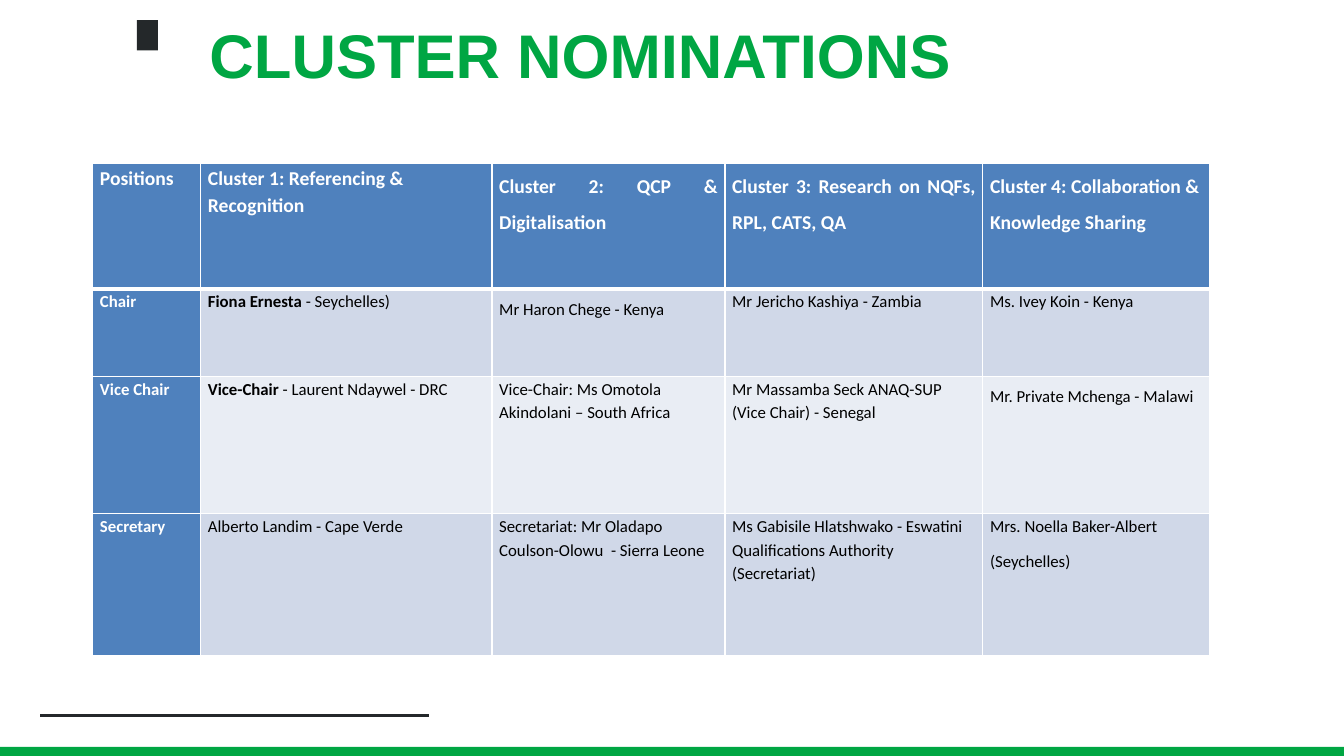
from lxml import etree
from pptx import Presentation
from pptx.dml.color import RGBColor
from pptx.enum.shapes import MSO_CONNECTOR as Connector, MSO_SHAPE as Preset
from pptx.enum.text import PP_ALIGN as Align
from pptx.oxml.ns import qn
from pptx.util import Cm, Pt

GREEN = RGBColor(0x00, 0xA6, 0x43)
INK = RGBColor(0x24, 0x28, 0x2A)
WHITE = RGBColor(0xFF, 0xFF, 0xFF)
BLACK = RGBColor(0x00, 0x00, 0x00)
BLUE = RGBColor(0x4F, 0x81, 0xBD)
BANDS = (RGBColor(0xD0, 0xD8, 0xE8), RGBColor(0xE9, 0xED, 0xF4))

TITLE = "CLUSTER NOMINATIONS"
ROWS = [
    ["Positions", "Cluster 1: Referencing & Recognition",
     "Cluster 2: QCP & Digitalisation",
     "Cluster 3: Research on NQFs, RPL, CATS, QA",
     "Cluster 4: Collaboration & Knowledge Sharing"],
    ["Chair", ("Fiona Ernesta ", "- Seychelles)"), "Mr Haron Chege - Kenya",
     "Mr Jericho Kashiya - Zambia", "Ms. Ivey Koin - Kenya"],
    ["Vice Chair", ("Vice-Chair", " - Laurent Ndaywel - DRC"),
     "Vice-Chair: Ms Omotola Akindolani – South Africa",
     "Mr Massamba Seck ANAQ-SUP (Vice Chair) - Senegal",
     "Mr. Private Mchenga - Malawi"],
    ["Secretary", "Alberto Landim - Cape Verde",
     "Secretariat: Mr Oladapo Coulson-Olowu  - Sierra Leone",
     "Ms Gabisile Hlatshwako - Eswatini Qualifications Authority (Secretariat)",
     ["Mrs. Noella Baker-Albert", "(Seychelles)"]],
]
COLUMN_WIDTHS = (2.72, 7.34, 5.87, 6.5, 5.72)
ROW_HEIGHTS = (3.17, 2.2, 3.46, 3.58)
WIDE_SPACED = {(0, 2), (0, 3), (0, 4), (1, 2), (2, 4)}
JUSTIFIED = WIDE_SPACED - {(0, 4)}


def add_run(paragraph, text, size, color, bold, font="Calibri"):
    run = paragraph.add_run()
    run.text = text
    run.font.name = font
    run.font.size = Pt(size)
    run.font.bold = bold
    run.font.color.rgb = color


def add_block(slide, left, top, width, height, color):
    shape = slide.shapes.add_shape(
        Preset.RECTANGLE, Cm(left), Cm(top), Cm(width), Cm(height))
    shape.shadow.inherit = False
    shape.fill.solid()
    shape.fill.fore_color.rgb = color
    shape.line.fill.background()


def add_borders(cell, bottom, top):
    properties = cell._tc.get_or_add_tcPr()
    for side, width in (("L", 1), ("R", 1), ("T", top), ("B", bottom)):
        line = etree.SubElement(properties, qn(f"a:ln{side}"), w=str(Pt(width)))
        fill = etree.SubElement(line, qn("a:solidFill"))
        etree.SubElement(fill, qn("a:srgbClr"), val=str(WHITE))


def fill_cell(cell, content, row, column):
    is_heading = row == 0 or column == 0
    add_borders(cell, bottom=3 if row == 0 else 1, top=3 if row == 1 else 1)
    cell.fill.solid()
    cell.fill.fore_color.rgb = BLUE if is_heading else BANDS[(row - 1) % 2]
    cell.margin_left = cell.margin_right = Cm(0.18)
    cell.margin_top = cell.margin_bottom = Cm(0)
    lines = content if isinstance(content, list) else [content]
    for index, line in enumerate(lines):
        frame = cell.text_frame
        paragraph = frame.paragraphs[0] if index == 0 else frame.add_paragraph()
        paragraph.line_spacing = 1.5 if (row, column) in WIDE_SPACED else 1.15
        paragraph.space_after = Pt(8)
        paragraph.alignment = (
            Align.JUSTIFY if (row, column) in JUSTIFIED else Align.LEFT)
        parts = line if isinstance(line, tuple) else (line,)
        for position, text in enumerate(parts):
            bold = is_heading or (len(parts) > 1 and position == 0)
            add_run(paragraph, text, 14 if row == 0 else 12,
                    WHITE if is_heading else BLACK, bold)


def add_nominations(slide):
    table = slide.shapes.add_table(
        len(ROWS), len(COLUMN_WIDTHS), Cm(2.34), Cm(4.11),
        Cm(sum(COLUMN_WIDTHS)), Cm(sum(ROW_HEIGHTS))).table
    for column, width in zip(table.columns, COLUMN_WIDTHS):
        column.width = Cm(width)
    for row, height in zip(table.rows, ROW_HEIGHTS):
        row.height = Cm(height)
    for row, contents in enumerate(ROWS):
        for column, content in enumerate(contents):
            fill_cell(table.cell(row, column), content, row, column)


def add_title(slide):
    frame = slide.shapes.add_textbox(
        Cm(5.28), Cm(0.43), Cm(27.74), Cm(1.88)).text_frame
    frame.word_wrap = True
    frame.margin_left = frame.margin_right = Cm(0)
    frame.margin_top = frame.margin_bottom = Cm(0)
    add_run(frame.paragraphs[0], TITLE, 44, GREEN, True, "Arial")


def add_footer_rule(slide):
    rule = slide.shapes.add_connector(
        Connector.STRAIGHT, Cm(1.02), Cm(18.03), Cm(10.8), Cm(18.03))
    rule.line.color.rgb = INK
    rule.line.width = Pt(1.5)
    etree.SubElement(rule._element.spPr, qn("a:effectLst"))


def main():
    presentation = Presentation()
    presentation.slide_width = Cm(33.87)
    presentation.slide_height = Cm(19.05)
    slide = presentation.slides.add_slide(presentation.slide_layouts[6])
    add_block(slide, 0, 18.82, 33.87, 0.23, GREEN)
    add_footer_rule(slide)
    add_block(slide, 3.45, 0.51, 0.53, 0.76, INK)
    add_title(slide)
    add_nominations(slide)
    presentation.save("out.pptx")


if __name__ == "__main__":
    main()
